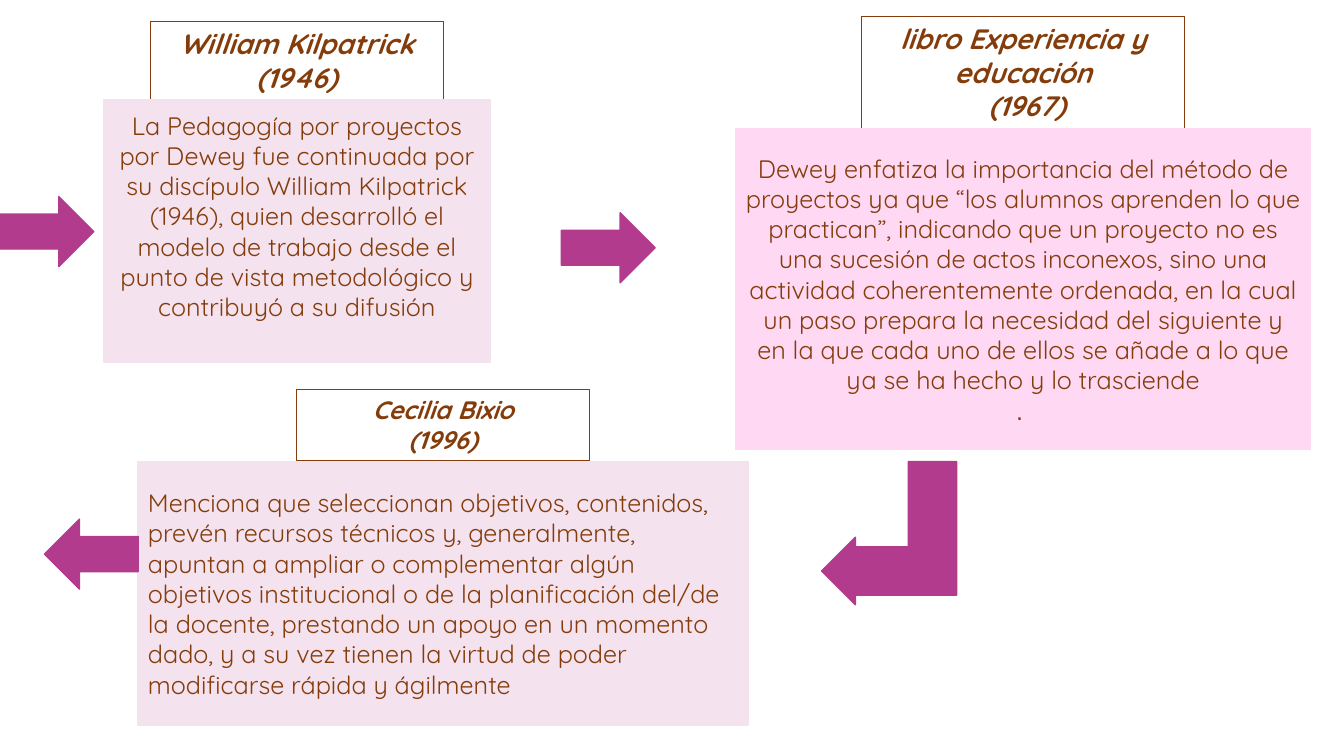
from dataclasses import dataclass

from pptx import Presentation
from pptx import util as u
from pptx.dml.color import RGBColor
from pptx.enum import shapes, text


@dataclass(frozen=True)
class Theme:
    ink: RGBColor = RGBColor(0x84, 0x3C, 0x0B)
    pale: RGBColor = RGBColor(0xF5, 0xE2, 0xEF)
    pink: RGBColor = RGBColor(0xFF, 0xD8, 0xF3)
    arrow: RGBColor = RGBColor(0xB2, 0x3B, 0x8D)
    font: str = "Quicksand"
    title_size: int = 20
    body_size: int = 18


theme = Theme()
SHAPE = shapes.MSO_SHAPE
CENTER, LEFT = text.PP_ALIGN.CENTER, text.PP_ALIGN.LEFT

presentation = Presentation()
presentation.slide_width, presentation.slide_height = u.Pt(960), u.Pt(540)
slide = presentation.slides.add_slide(presentation.slide_layouts[6])


def add_block(kind, box, fill, line, line_width=1):
    shape = slide.shapes.add_shape(kind, *(u.Pt(length) for length in box))
    shape.shadow.inherit = False
    if fill is None:
        shape.fill.background()
    else:
        shape.fill.solid()
        shape.fill.fore_color.rgb = fill
    shape.line.color.rgb = line
    shape.line.width = u.Pt(line_width)
    return shape


def write(shape, wording, size, align, anchor, bold=False):
    frame = shape.text_frame
    frame.word_wrap = True
    frame.vertical_anchor = anchor
    frame.text = wording
    for paragraph in frame.paragraphs:
        paragraph.alignment = align
        for run in paragraph.runs:
            run.font.name = theme.font
            run.font.size = u.Pt(size)
            run.font.bold = run.font.italic = bold
            run.font.color.rgb = theme.ink


# Cards: title box and wording, title size, body box, fill, alignment and wording
cards = [
    ((615.6, 12, 230.4, 80), "libro Experiencia y educación\n (1967)", theme.title_size,
     (525.6, 92, 410.4, 229), theme.pink, CENTER,
     "Dewey enfatiza la importancia del método de proyectos ya que “los alumnos "
     "aprenden lo que practican”, indicando que un proyecto no es una sucesión de "
     "actos inconexos, sino una actividad coherentemente ordenada, en la cual un paso "
     "prepara la necesidad del siguiente y en la que cada uno de ellos se añade a lo "
     "que ya se ha hecho y lo trasciende\n. "),
    ((107.3, 15.3, 209.5, 55.7), "William Kilpatrick (1946)", theme.title_size,
     (74.2, 71, 275.8, 188), theme.pale, CENTER,
     "La Pedagogía por proyectos por Dewey fue continuada por su discípulo William "
     "Kilpatrick (1946), quien desarrolló el modelo de trabajo desde el punto de vista "
     "metodológico y contribuyó a su difusión"),
    ((211.7, 278, 209.5, 51), "Cecilia Bixio\n (1996) ", theme.body_size,
     (98.6, 329.8, 435.6, 188), theme.pale, LEFT,
     "Menciona que seleccionan objetivos, contenidos, prevén recursos técnicos y, "
     "generalmente, apuntan a ampliar o complementar algún objetivos institucional o "
     "de la planificación del/de la docente, prestando un apoyo en un momento dado, y "
     "a su vez tienen la virtud de poder modificarse rápida y ágilmente"),
]
bodies = []
for title_box, title, title_size, body_box, fill, align, wording in cards:
    title_shape = add_block(SHAPE.RECTANGLE, title_box, None, theme.ink, 0.75)
    write(title_shape, title, title_size, CENTER, text.MSO_ANCHOR.TOP, bold=True)
    body_shape = add_block(SHAPE.RECTANGLE, body_box, fill, fill)
    write(body_shape, wording, theme.body_size, align, text.MSO_ANCHOR.MIDDLE)
    bodies.append(body_shape)

# The closing point is set in Arial; the Kilpatrick text sits a little higher
book_body, kilpatrick_body, _ = bodies
book_body.text_frame.paragraphs[-1].runs[0].font.name = "Arial"
kilpatrick_body.text_frame.margin_bottom = u.Pt(25.2)

# Straight arrows
for left, top, rotation in [(0, 140.4, 0), (401, 152, 0), (31.7, 370.8, 180)]:
    arrow = add_block(SHAPE.RIGHT_ARROW, (left, top, 67, 50), theme.arrow, theme.arrow)
    arrow.rotation = rotation

# Bent arrow from the book to Cecilia Bixio
bent_arrow = add_block(SHAPE.BENT_UP_ARROW, (584, 332.6, 102.2, 96.5),
                       theme.arrow, theme.arrow)
bent_arrow.adjustments[0] = 0.358
bent_arrow.rotation = 270
bent_arrow.element.spPr.xfrm.set("flipH", "1")

presentation.save("out.pptx")
